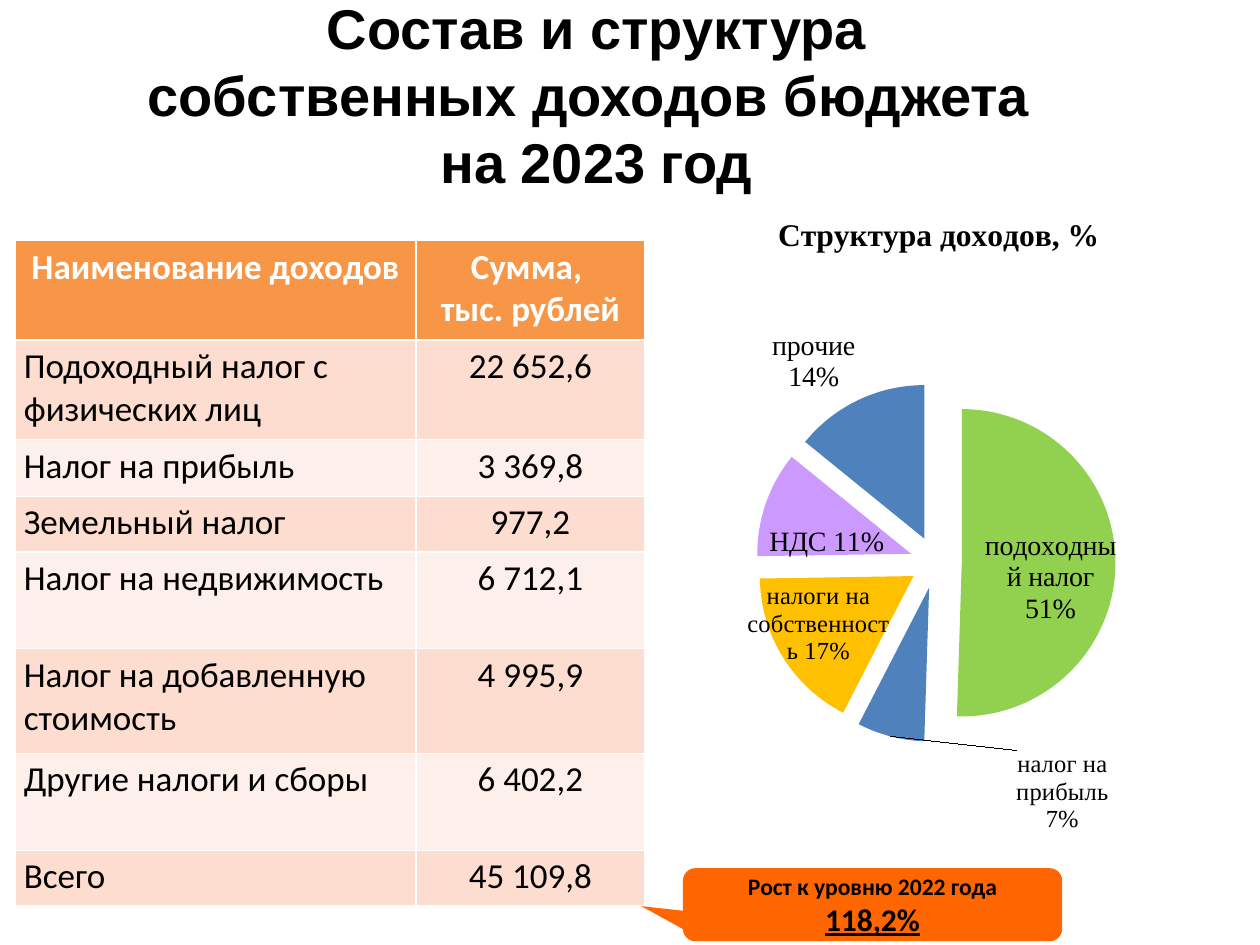
from dataclasses import dataclass

from lxml.etree import SubElement
from pptx import Presentation
from pptx.chart.data import CategoryChartData
from pptx.dml.color import RGBColor
from pptx.enum.chart import XL_CHART_TYPE, XL_LABEL_POSITION
from pptx.enum.shapes import MSO_SHAPE
from pptx.enum.text import MSO_ANCHOR, PP_ALIGN
from pptx.oxml import parse_xml
from pptx.oxml.ns import nsdecls, qn
from pptx.util import Inches, Pt

COLORS = {
    "black": "000000", "white": "FFFFFF", "header": "F79646",
    "band_dark": "FCDDCF", "band_light": "FDEFE9", "callout": "FF6600",
    "green": "92D050", "blue": "4F81BD", "amber": "FFC000", "violet": "CC99FF",
}
SERIF = "Times New Roman"
EXPLOSION = 17


@dataclass
class Income:
    name: str
    amount: str
    height: float


@dataclass
class Slice:
    name: str
    percent: int
    color: str
    label_size: int
    position: XL_LABEL_POSITION
    shift: tuple[float, float] = (0, 0)


INCOMES = [
    Income("Подоходный налог с физических лиц", "22 652,6", 0.79),
    Income("Налог на прибыль", "3 369,8", 0.45),
    Income("Земельный налог", "977,2", 0.44),
    Income("Налог на недвижимость", "6 712,1", 0.77),
    Income("Налог на добавленную стоимость", "4 995,9", 0.83),
    Income("Другие налоги и сборы", "6 402,2", 0.77),
    Income("Всего", "45 109,8", 0.44),
]
SLICES = [
    Slice("подоходный налог", 50, "green", 16, XL_LABEL_POSITION.CENTER, (0.02, 0.02)),
    Slice("налог на прибыль", 7, "blue", 14, XL_LABEL_POSITION.OUTSIDE_END, (0.37, 0.01)),
    Slice("налоги на собственность", 17, "amber", 14, XL_LABEL_POSITION.CENTER, (-0.05, 0.01)),
    Slice("НДС", 11, "violet", 16, XL_LABEL_POSITION.CENTER, (-0.02, 0.02)),
    Slice("прочие", 14, "blue", 16, XL_LABEL_POSITION.OUTSIDE_END),
]


def rgb(name: str) -> RGBColor:
    return RGBColor.from_string(COLORS[name])


def write(para, text: str, *, size: float, font: str = "Calibri", color: str = "black",
          bold: bool = False, underline: bool = False, align=PP_ALIGN.CENTER) -> None:
    para.alignment = align
    for index, line in enumerate(text.split("\n")):
        if index:
            para.add_line_break()
        span = para.add_run()
        span.text = line
        span.font.size, span.font.name = Pt(size), font
        span.font.bold, span.font.underline = bold, underline
        span.font.color.rgb = rgb(color)


def add_title(page) -> None:
    box = page.shapes.add_textbox(Inches(1.06), Inches(0.48), Inches(7.35), Inches(0.53))
    frame = box.text_frame
    frame.word_wrap = True
    frame.vertical_anchor = MSO_ANCHOR.MIDDLE
    write(frame.paragraphs[0], "Состав и структура собственных доходов бюджета \nна 2023 год",
          size=32, font="Arial", bold=True)


def style_cell(cell, fill: str) -> None:
    cell.fill.solid()
    cell.fill.fore_color.rgb = rgb(fill)
    cell.margin_left = cell.margin_right = Inches(0.07)
    cell.margin_top = cell.margin_bottom = Inches(0.04)


def add_income_table(page) -> None:
    header_height = 0.79
    total = header_height + sum(income.height for income in INCOMES)
    table = page.shapes.add_table(len(INCOMES) + 1, 2, Inches(0.12), Inches(1.91),
                                  Inches(5), Inches(total)).table
    for column, width in zip(table.columns, (3.18, 1.82)):
        column.width = Inches(width)
    table.rows[0].height = Inches(header_height)
    for column, lines in enumerate((["Наименование доходов"], ["Сумма, ", "тыс. рублей"])):
        cell = table.cell(0, column)
        style_cell(cell, "header")
        frame = cell.text_frame
        for index, line in enumerate(lines):
            para = frame.add_paragraph() if index else frame.paragraphs[0]
            write(para, line, size=20, color="white", bold=True)
    for row, income in enumerate(INCOMES, 1):
        table.rows[row].height = Inches(income.height)
        fill = "band_dark" if row % 2 else "band_light"
        for column, (text, align) in enumerate(((income.name, PP_ALIGN.LEFT),
                                                (income.amount, PP_ALIGN.CENTER))):
            cell = table.cell(row, column)
            style_cell(cell, fill)
            write(cell.text_frame.paragraphs[0], text, size=20, align=align)


def manual_layout(**values: object):
    entries = "".join(f'<c:{tag} val="{value}"/>' for tag, value in values.items())
    return parse_xml(f"<c:layout {nsdecls('c')}><c:manualLayout>{entries}"
                     "</c:manualLayout></c:layout>")


def format_slice(series, index: int, part: Slice) -> None:
    point = series.points[index]
    point.format.fill.solid()
    point.format.fill.fore_color.rgb = rgb(part.color)
    label = point.data_label
    label.font.size, label.font.name = Pt(part.label_size), SERIF
    label.font.color.rgb = rgb("black")
    label.position = part.position
    node = series._element.xpath(f"c:dLbls/c:dLbl[c:idx/@val='{index}']")[0]
    for tag, shown in (("showVal", 0), ("showCatName", 1), ("showPercent", 1)):
        node.find(qn(f"c:{tag}")).set("val", str(shown))
    SubElement(node, qn("c:separator")).text = " "
    if any(part.shift):
        node.insert(1, manual_layout(x=part.shift[0], y=part.shift[1]))


def add_income_chart(page) -> None:
    data = CategoryChartData()
    data.categories = [part.name for part in SLICES]
    data.add_series("Структура доходов, %", [part.percent for part in SLICES])
    chart = page.shapes.add_chart(XL_CHART_TYPE.PIE, Inches(5.09), Inches(1.5),
                                  Inches(4.72), Inches(5.49), data).chart
    chart.font.size, chart.font.name = Pt(18), "Calibri"
    chart.font.color.rgb = rgb("black")
    chart.has_legend = False
    chart.has_title = True
    write(chart.chart_title.text_frame.paragraphs[0], "Структура доходов, %",
          size=18, font=SERIF, bold=True)
    plot = chart.plots[0]
    plot.vary_by_categories = True
    series = plot.series[0]
    for index, part in enumerate(SLICES):
        format_slice(series, index, part)
    explosion = parse_xml(f'<c:explosion {nsdecls("c")} val="{EXPLOSION}"/>')
    series._element.find(qn("c:dPt")).addprevious(explosion)
    area = plot._element.getparent()
    for old in area.findall(qn("c:layout")):
        area.remove(old)
    area.insert(0, manual_layout(layoutTarget="inner", xMode="edge", yMode="edge",
                                 x=0.19, y=0.28, w=0.61, h=0.52))


def add_growth_callout(page) -> None:
    callout = page.shapes.add_shape(MSO_SHAPE.ROUNDED_RECTANGULAR_CALLOUT, Inches(5.42),
                                    Inches(6.89), Inches(3.01), Inches(0.58))
    for index, value in enumerate((-0.61, 0.02, 0.17)):
        callout.adjustments[index] = value
    callout.shadow.inherit = False
    callout.fill.solid()
    callout.fill.fore_color.rgb = rgb("callout")
    callout.line.fill.background()
    frame = callout.text_frame
    frame.word_wrap = True
    frame.vertical_anchor = MSO_ANCHOR.MIDDLE
    para = frame.paragraphs[0]
    write(para, "Рост к уровню 2022 года ", size=13.5, bold=True)
    write(para, "118,2%", size=18, bold=True, underline=True)


def main() -> None:
    """Build the slide on the composition of the budget's own income."""
    deck = Presentation()
    deck.slide_width, deck.slide_height = Inches(10), Inches(7.5)
    page = deck.slides.add_slide(deck.slide_layouts[6])
    add_title(page)
    add_income_table(page)
    add_income_chart(page)
    add_growth_callout(page)
    deck.save("out.pptx")


if __name__ == "__main__":
    main()
